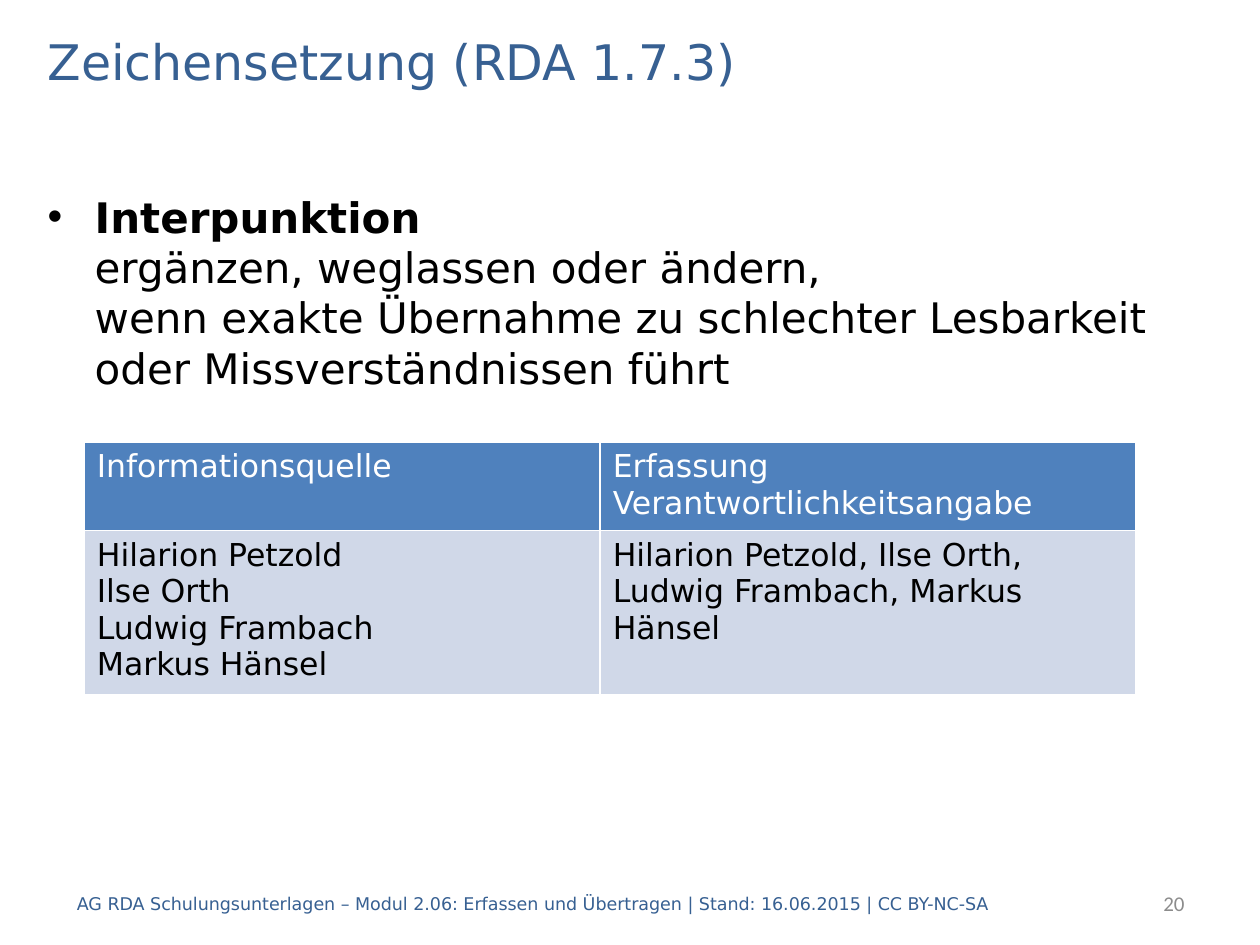
from lxml.etree import SubElement
from pptx import Presentation
from pptx.dml.color import RGBColor
from pptx.enum.text import MSO_ANCHOR as Anchor, PP_ALIGN as Align
from pptx.oxml.ns import qn
from pptx.util import Cm, Pt

SANS = "DejaVu Sans"
BLUE = "376092"
HEADER_ROW = ("Informationsquelle", "Erfassung Verantwortlichkeitsangabe")
EXAMPLE_ROW = (
    "Hilarion Petzold\vIlse Orth\vLudwig Frambach\vMarkus Hänsel",
    "Hilarion Petzold, Ilse Orth, Ludwig Frambach, Markus Hänsel",
)


def color(hex_code):
    return RGBColor.from_string(hex_code)


def style(paragraph, size, hex_code, face=SANS):
    font = paragraph.font
    font.size, font.name = Pt(size), face
    font.color.rgb = color(hex_code)


def add_frame(slide, left, top, width, height, anchor=Anchor.MIDDLE):
    """Add a wrapping text box, measured in centimetres."""
    box = slide.shapes.add_textbox(Cm(left), Cm(top), Cm(width), Cm(height))
    frame = box.text_frame
    frame.word_wrap = True
    frame.vertical_anchor = anchor
    return frame


def add_line(slide, bounds, text, size, hex_code, face=SANS, align=Align.LEFT):
    paragraph = add_frame(slide, *bounds).paragraphs[0]
    paragraph.text = text
    paragraph.alignment = align
    style(paragraph, size, hex_code, face)


def add_bullet(slide, bounds, term, lines):
    """Add a bulleted bold term with its explanation on the lines below."""
    paragraph = add_frame(slide, *bounds, anchor=Anchor.TOP).paragraphs[0]
    style(paragraph, 24, "000000")
    paragraph.space_before = Pt(4.8)
    term_run = paragraph.add_run()
    term_run.text = term
    term_run.font.bold = True
    for line in lines:
        paragraph.add_line_break()
        paragraph.add_run().text = line
    for line_break in paragraph._p.findall(qn("a:br")):
        SubElement(line_break, qn("a:rPr"), sz="2400")

    properties = paragraph._p.get_or_add_pPr()
    indent = Cm(0.95)
    properties.set("marL", str(indent))
    properties.set("indent", str(-indent))
    bullet_font = SubElement(properties, qn("a:buFont"), typeface="Arial")
    bullet = SubElement(properties, qn("a:buChar"), char="•")
    properties.find(qn("a:defRPr")).addprevious(bullet_font)
    bullet_font.addnext(bullet)


def add_example_table(slide):
    rows = (
        (HEADER_ROW, 1.71, "4F81BD", "FFFFFF"),
        (EXAMPLE_ROW, 3.2, "D0D8E8", "000000"),
    )
    widths = (10.4, 10.8)
    table = slide.shapes.add_table(
        len(rows), len(widths), Cm(1.7), Cm(8.92), Cm(sum(widths)), Cm(4.91)
    ).table
    for column, width in zip(table.columns, widths):
        column.width = Cm(width)
    for row, (texts, height, fill, ink) in zip(table.rows, rows):
        row.height = Cm(height)
        for cell, text in zip(row.cells, texts):
            cell.fill.solid()
            cell.fill.fore_color.rgb = color(fill)
            paragraph = cell.text_frame.paragraphs[0]
            paragraph.text = text
            style(paragraph, 18, ink)
            paragraph.font.bold = False


def main():
    presentation = Presentation()
    presentation.slide_width, presentation.slide_height = Cm(25.4), Cm(19.05)
    slide = presentation.slides.add_slide(presentation.slide_layouts[6])

    add_line(slide, (0.71, 0.51, 24, 1.42), "Zeichensetzung (RDA 1.7.3)", 28, BLUE)
    add_bullet(slide, (0.71, 3.73, 24, 13.79), "Interpunktion ", (
        "ergänzen, weglassen oder ändern, ",
        "wenn exakte Übernahme zu schlechter Lesbarkeit oder Missverständnissen führt",
    ))
    add_example_table(slide)
    add_line(
        slide, (1.3, 17.7, 21.2, 1.02),
        "AG RDA Schulungsunterlagen – Modul 2.06: Erfassen und Übertragen"
        " | Stand: 16.06.2015 | CC BY-NC-SA",
        10, BLUE,
    )
    add_line(slide, (20.09, 17.7, 4.04, 1.02), "20", 12, "8C8C8C", "Calibri", Align.RIGHT)
    presentation.save("out.pptx")


if __name__ == "__main__":
    main()
